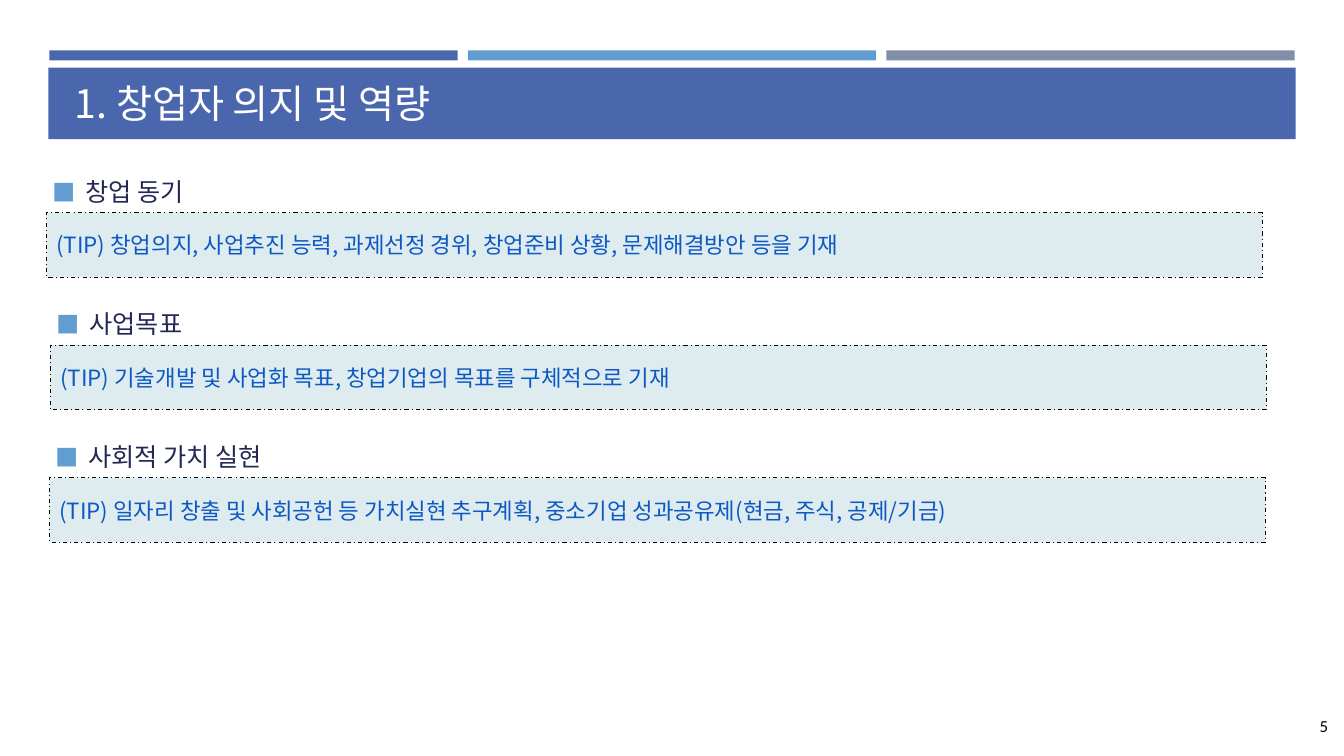
from lxml.etree import SubElement
from pptx import Presentation
from pptx.dml.color import RGBColor as RGB
from pptx.enum.dml import MSO_LINE
from pptx.enum.shapes import MSO_SHAPE
from pptx.enum.text import MSO_ANCHOR, MSO_AUTO_SIZE, PP_ALIGN
from pptx.oxml.ns import qn
from pptx.util import Inches, Pt

COLORS = {
    "blue": "4A66AC", "sky": "629DD1", "slate": "7F8FA9", "navy": "242852",
    "tip": "0E58C4", "pale": "DEECEF", "white": "FFFFFF", "black": "000000",
}
KOREAN = "Noto Sans CJK KR"


def add_bar(s, left, top, width, height, fill):
    sp = s.shapes.add_shape(MSO_SHAPE.RECTANGLE, Inches(left), Inches(top),
                            Inches(width), Inches(height))
    sp.shadow.inherit = False
    sp.fill.solid()
    sp.fill.fore_color.rgb = RGB.from_string(COLORS[fill])
    sp.line.fill.background()
    return sp


def write(sp, text, size, color, font=KOREAN, align=PP_ALIGN.LEFT):
    tf = sp.text_frame
    tf.text = text
    tf.word_wrap = True
    tf.auto_size = MSO_AUTO_SIZE.NONE
    tf.vertical_anchor = MSO_ANCHOR.MIDDLE
    p = tf.paragraphs[0]
    p.alignment = align
    r = p.runs[0]
    r.font.size = Pt(size)
    r.font.name = font
    r.font.color.rgb = RGB.from_string(COLORS[color])
    SubElement(r.font._element, qn("a:ea"), typeface=font)
    return p


prs = Presentation()
prs.slide_width, prs.slide_height = Inches(13.33), Inches(7.5)
s = prs.slides.add_slide(prs.slide_layouts[5])

for col, fill in enumerate(("blue", "sky", "slate")):
    add_bar(s, 0.49 + col * 4.15, 0.5, 4.05, 0.1, fill)
banner = add_bar(s, 0.48, 0.67, 12.37, 0.71, "blue")

title = s.shapes.title
title.left, title.top = Inches(0.64), Inches(0.72)
title.width, title.height = Inches(12.06), Inches(0.6)
write(title, "1. 창업자 의지 및 역량", 28, "white")
banner.element.addnext(title.element)

number = s.shapes.add_textbox(Inches(12.12), Inches(7), Inches(1.15), Inches(0.4))
write(number, "5", 12, "black", "Calibri", PP_ALIGN.RIGHT)

sections = [
    (0.42, "창업 동기",
     "(TIP) 창업의지, 사업추진 능력, 과제선정 경위, 창업준비 상황, 문제해결방안 등을 기재"),
    (0.46, "사업목표",
     "(TIP) 기술개발 및 사업화 목표, 창업기업의 목표를 구체적으로 기재"),
    (0.45, "사회적 가치 실현",
     "(TIP) 일자리 창출 및 사회공헌 등 가치실현 추구계획, 중소기업 성과공유제(현금, 주식, 공제/기금)"),
]
for row, (left, heading, tip) in enumerate(sections):
    top = 1.64 + row * 1.315
    head = s.shapes.add_textbox(Inches(left), Inches(top), Inches(12.06), Inches(0.51))
    p = write(head, heading, 18, "navy")
    p.space_before, p.space_after = Pt(3.6), Pt(6)
    pPr = p._p.get_or_add_pPr()
    pPr.set("marL", str(Inches(0.33)))
    pPr.set("indent", str(-Inches(0.33)))
    SubElement(SubElement(pPr, qn("a:buClr")), qn("a:srgbClr"), val=COLORS["sky"])
    SubElement(pPr, qn("a:buSzPct"), val="92000")
    SubElement(pPr, qn("a:buFont"), typeface=KOREAN)
    SubElement(pPr, qn("a:buChar"), char="■")

    box = add_bar(s, left + 0.04, top + 0.47, 12.06, 0.64, "pale")
    box.line.color.rgb = RGB.from_string(COLORS["black"])
    box.line.width = Pt(0.75)
    box.line.dash_style = MSO_LINE.DASH_DOT
    p = write(box, tip, 16, "tip")
    p.space_before, p.space_after = Pt(3.2), Pt(6)

prs.save("out.pptx")
